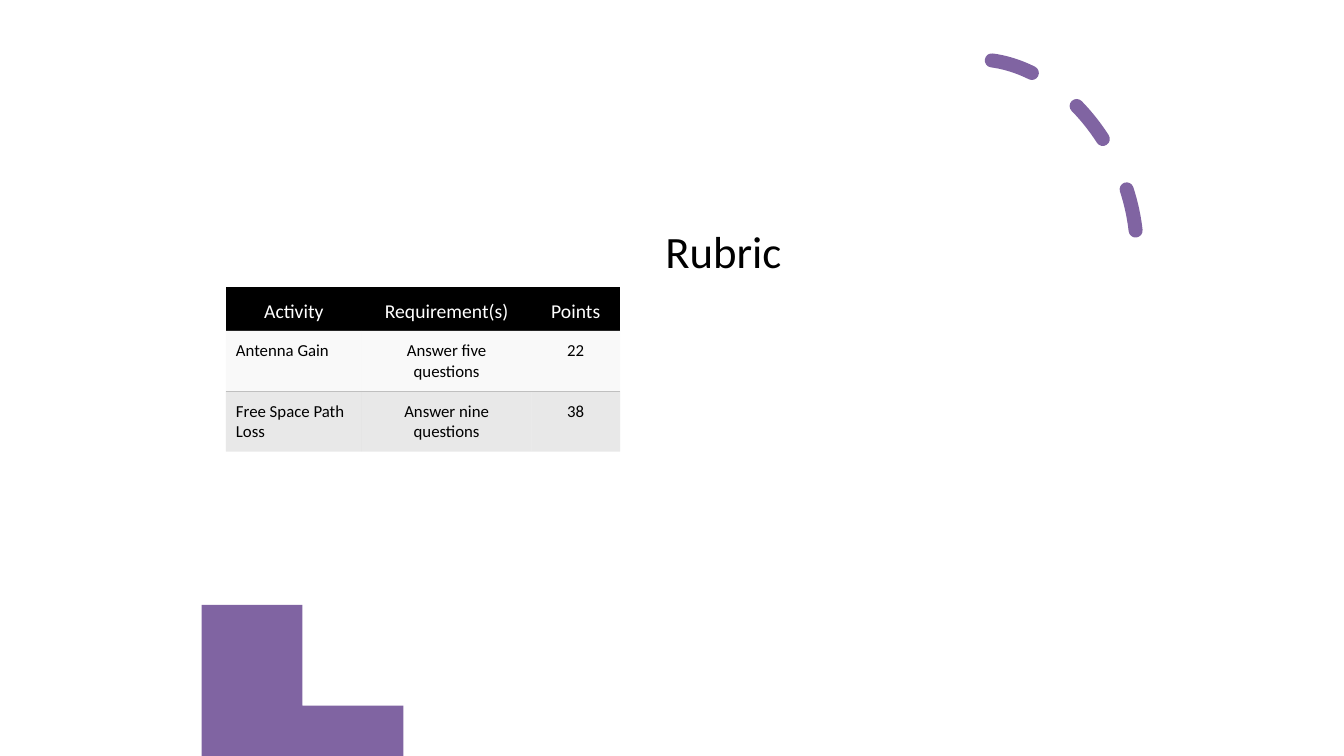
"""Build the rubric slide with its points table and purple decorations."""
from lxml.etree import SubElement
from pptx import Presentation
from pptx.dml.color import RGBColor
from pptx.enum.dml import MSO_LINE
from pptx.enum.shapes import MSO_SHAPE
from pptx.enum.text import MSO_ANCHOR, PP_ALIGN
from pptx.oxml import parse_xml
from pptx.oxml.ns import nsdecls, qn
from pptx.util import Inches, Pt

PURPLE = RGBColor(0x80, 0x64, 0xA2)
BLACK = RGBColor(0, 0, 0)
WHITE = RGBColor(255, 255, 255)
PALE = RGBColor(0xF2, 0xF2, 0xF2)
GREY = RGBColor(0xBF, 0xBF, 0xBF)
FONT = "Calibri"
NO_STYLE = "{2D5ABB26-0587-4C30-8999-92F81FD0307C}"

TITLE = "Rubric"
RUBRIC = [
    ("Activity", "Requirement(s)", "Points"),
    ("Antenna Gain", "Answer five questions", "22"),
    ("Free Space Path Loss", "Answer nine questions", "38"),
]
COLUMN_WIDTHS = (1.35, 1.68, 0.88)
ROW_STYLES = [
    {"height": 0.43, "fill": BLACK, "opacity": 100, "size": 14, "color": WHITE},
    {"height": 0.6, "fill": PALE, "opacity": 45, "size": 12, "color": BLACK, "edge": "lnB"},
    {"height": 0.6, "fill": GREY, "opacity": 35, "size": 12, "color": BLACK, "edge": "lnT"},
]
DOME_CURVES = [
    ((1.76, 6.23), (1.96, 6.08), (2.2, 6), (2.45, 6)),
    ((2.45, 6), (3.1, 6), (3.65, 6.57), (3.83, 7.36)),
]
DOME_BASE = [(3.86, 7.5), (1.67, 7.5), (1.67, 6.31)]
CURVE_STEPS = 24


def curve_point(curve, t):
    weights = ((1 - t) ** 3, 3 * t * (1 - t) ** 2, 3 * t * t * (1 - t), t ** 3)
    return tuple(sum(w * p[axis] for w, p in zip(weights, curve)) for axis in (0, 1))


def style_text(paragraph, size, color):
    paragraph.font.name = FONT
    paragraph.font.size = Pt(size)
    paragraph.font.color.rgb = color


def add_arc(slide):
    arc = slide.shapes.add_shape(
        MSO_SHAPE.ARC, Inches(8.34), Inches(0.94), Inches(3.27), Inches(2.45))
    arc.adjustments[0] = 144.42
    arc.adjustments[1] = 0
    arc.rotation = 66.1
    arc.shadow.inherit = False
    arc.fill.background()
    arc.line.color.rgb = PURPLE
    arc.line.width = Pt(10)
    arc.line.dash_style = MSO_LINE.DASH
    properties = arc._element.spPr
    properties.find(qn("a:xfrm")).set("flipH", "1")
    properties.find(qn("a:ln")).set("cap", "rnd")


def add_dome(slide):
    outline = [curve_point(curve, step / CURVE_STEPS)
               for curve in DOME_CURVES for step in range(CURVE_STEPS + 1)]
    outline += DOME_BASE
    builder = slide.shapes.build_freeform(*outline[0], scale=Inches(1))
    builder.add_line_segments(outline[1:], close=True)
    dome = builder.convert_to_shape()
    dome.shadow.inherit = False
    dome.fill.solid()
    dome.fill.fore_color.rgb = PURPLE
    dome.line.fill.background()


def add_title(slide):
    title = slide.shapes.add_textbox(Inches(6.5), Inches(2.17), Inches(4.48), Inches(4.58))
    title.text_frame.word_wrap = True
    title.text_frame.text = TITLE
    style_text(title.text_frame.paragraphs[0], 32, BLACK)


def fill_cell(cell, text, style, is_header, is_label):
    cell.text = text
    cell.margin_left = cell.margin_right = cell.margin_top = Inches(0.1)
    cell.margin_bottom = Inches(0.05)
    cell.vertical_anchor = MSO_ANCHOR.MIDDLE if is_header else MSO_ANCHOR.TOP
    paragraph = cell.text_frame.paragraphs[0]
    paragraph.alignment = PP_ALIGN.LEFT if is_label and not is_header else PP_ALIGN.CENTER
    style_text(paragraph, style["size"], style["color"])
    cell.fill.solid()
    cell.fill.fore_color.rgb = style["fill"]
    properties = cell._tc.tcPr
    if style["opacity"] < 100:
        tint = properties.find(qn("a:solidFill")).find(qn("a:srgbClr"))
        SubElement(tint, qn("a:alpha")).set("val", str(style["opacity"] * 1000))
    if "edge" in style:
        edge = style["edge"]
        properties.insert(0, parse_xml(
            f'<a:{edge} {nsdecls("a")} w="{Pt(1)}"><a:solidFill>'
            f'<a:srgbClr val="{GREY}"/></a:solidFill></a:{edge}>'))


def add_rubric(slide):
    height = sum(style["height"] for style in ROW_STYLES)
    table = slide.shapes.add_table(
        len(RUBRIC), len(COLUMN_WIDTHS), Inches(2.24), Inches(2.85),
        Inches(sum(COLUMN_WIDTHS)), Inches(height)).table
    table.horz_banding = False
    table._tbl.tblPr.find(qn("a:tableStyleId")).text = NO_STYLE
    for column, width in zip(table.columns, COLUMN_WIDTHS):
        column.width = Inches(width)
    for r, (texts, style) in enumerate(zip(RUBRIC, ROW_STYLES)):
        table.rows[r].height = Inches(style["height"])
        for c, text in enumerate(texts):
            fill_cell(table.cell(r, c), text, style, r == 0, c == 0)


def main():
    deck = Presentation()
    deck.slide_width = Inches(13.33)
    deck.slide_height = Inches(7.5)
    slide = deck.slides.add_slide(deck.slide_layouts[6])
    add_arc(slide)
    add_dome(slide)
    add_title(slide)
    add_rubric(slide)
    deck.save("out.pptx")


if __name__ == "__main__":
    main()
